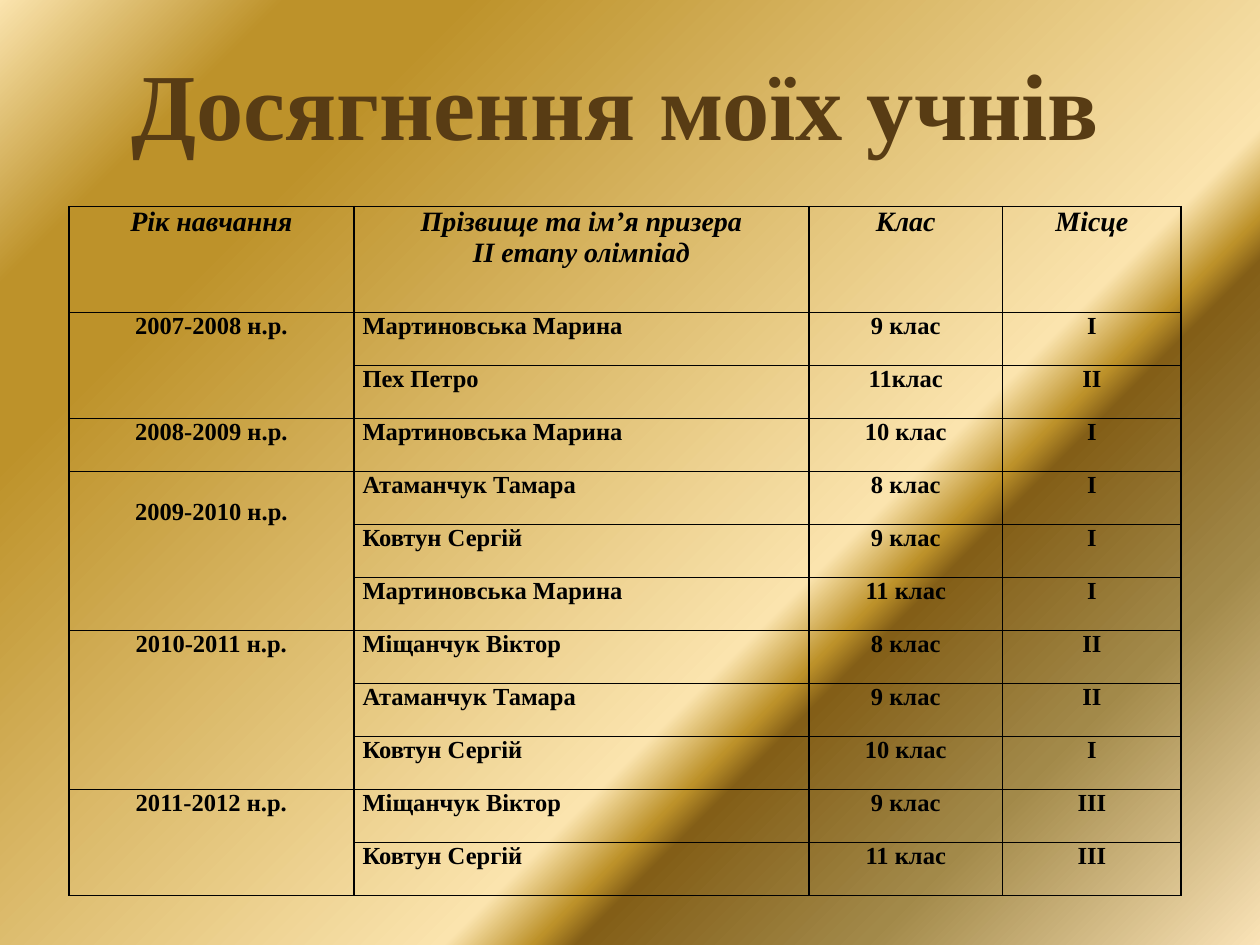
import dataclasses

import pptx
import pptx.dml.color
import pptx.enum.text
import pptx.oxml.ns
import pptx.util
from lxml import etree

Pt = pptx.util.Pt
qn = pptx.oxml.ns.qn
ALIGN = pptx.enum.text.PP_ALIGN


@dataclasses.dataclass(frozen=True)
class Theme:
    font: str = "Times New Roman"
    title_color: str = "583C14"
    text_color: str = "000000"
    border_color: str = "000000"
    title_size: int = 54
    header_size: int = 16
    body_size: int = 14
    # Background stops: position in percent, colour
    gradient: tuple = (
        (0, "FBE4AE"), (13, "BD922A"), (21, "BD922A"), (63, "FBE4AE"),
        (67, "BD922A"), (69, "835E17"), (82, "A28949"), (100, "FAE3B7"),
    )


theme = Theme()


def add_text(paragraph, text, size, color, align, italic=False):
    paragraph.alignment = align
    run = paragraph.add_run()
    run.text = text
    run.font.name = theme.font
    run.font.size = Pt(size)
    run.font.bold = True
    run.font.italic = italic
    run.font.color.rgb = pptx.dml.color.RGBColor.from_string(color)


def format_cell(cell):
    cell.margin_left = cell.margin_right = Pt(5)
    cell.margin_top = cell.margin_bottom = 0
    properties = cell._tc.get_or_add_tcPr()
    for side in ("a:lnL", "a:lnR", "a:lnT", "a:lnB"):
        line = etree.SubElement(properties, qn(side), w=str(Pt(1)))
        fill = etree.SubElement(line, qn("a:solidFill"))
        etree.SubElement(fill, qn("a:srgbClr"), val=theme.border_color)
    cell.fill.background()


presentation = pptx.Presentation()
presentation.slide_width = Pt(720)
presentation.slide_height = Pt(540)
slide = presentation.slides.add_slide(presentation.slide_layouts[6])

# Diagonal gold background
background = slide.background.fill
background.gradient()
background.gradient_angle = 315
stops = slide.element.find(".//" + qn("a:gsLst"))
for stop in list(stops):
    stops.remove(stop)
for position, color in theme.gradient:
    stop = etree.SubElement(stops, qn("a:gs"), pos=str(position * 1000))
    etree.SubElement(stop, qn("a:srgbClr"), val=color)

# Results table
headers = [
    ["Рік навчання"],
    ["Прізвище та ім’я призера", "ІІ етапу олімпіад"],
    ["Клас"],
    ["Місце"],
]
years = [
    ("2007-2008 н.р.", [("Мартиновська Марина", "9 клас", "І"),
                        ("Пех Петро", "11клас", "ІІ")]),
    ("2008-2009 н.р.", [("Мартиновська Марина", "10 клас", "І")]),
    ("2009-2010 н.р.", [("Атаманчук Тамара", "8 клас", "І"),
                        ("Ковтун Сергій", "9 клас", "І"),
                        ("Мартиновська Марина", "11 клас", "І")]),
    ("2010-2011 н.р.", [("Міщанчук Віктор", "8 клас", "ІІ"),
                        ("Атаманчук Тамара", "9 клас", "ІІ"),
                        ("Ковтун Сергій", "10 клас", "І")]),
    ("2011-2012 н.р.", [("Міщанчук Віктор", "9 клас", "ІІІ"),
                        ("Ковтун Сергій", "11 клас", "ІІІ")]),
]
lowered_year = "2009-2010 н.р."
column_widths = [162.8, 260, 110.8, 102]
header_height, row_height = 60.6, 30.3
row_count = 1 + sum(len(winners) for _, winners in years)

table = slide.shapes.add_table(
    row_count, len(headers), Pt(39.4), Pt(118), Pt(sum(column_widths)),
    Pt(header_height + row_height * (row_count - 1)),
).table
table.first_row = False
table.horz_banding = False
for column, width in zip(table.columns, column_widths):
    column.width = Pt(width)
for index, row in enumerate(table.rows):
    row.height = Pt(row_height if index else header_height)
for cell in table.iter_cells():
    format_cell(cell)

# Header row
for column, lines in enumerate(headers):
    frame = table.cell(0, column).text_frame
    for index, text in enumerate(lines):
        paragraph = frame.add_paragraph() if index else frame.paragraphs[0]
        add_text(paragraph, text, theme.header_size, theme.text_color,
                 ALIGN.CENTER, italic=True)

# Winners, with one year cell spanning each group
first_row = 1
for year, winners in years:
    year_cell = table.cell(first_row, 0)
    if len(winners) > 1:
        year_cell.merge(table.cell(first_row + len(winners) - 1, 0))
    if year == lowered_year:
        year_cell.margin_top = Pt(15.5)
    add_text(year_cell.text_frame.paragraphs[0], year, theme.body_size,
             theme.text_color, ALIGN.CENTER)
    for row, winner in enumerate(winners, first_row):
        for column, text in enumerate(winner, 1):
            paragraph = table.cell(row, column).text_frame.paragraphs[0]
            add_text(paragraph, text, theme.body_size, theme.text_color,
                     ALIGN.LEFT if column == 1 else ALIGN.CENTER)
    first_row += len(winners)

# Title
title = slide.shapes.add_textbox(Pt(67.7), Pt(23), Pt(568), Pt(72.7))
title.text_frame.word_wrap = True
add_text(title.text_frame.paragraphs[0], "Досягнення моїх учнів",
         theme.title_size, theme.title_color, ALIGN.CENTER)

presentation.save("out.pptx")
